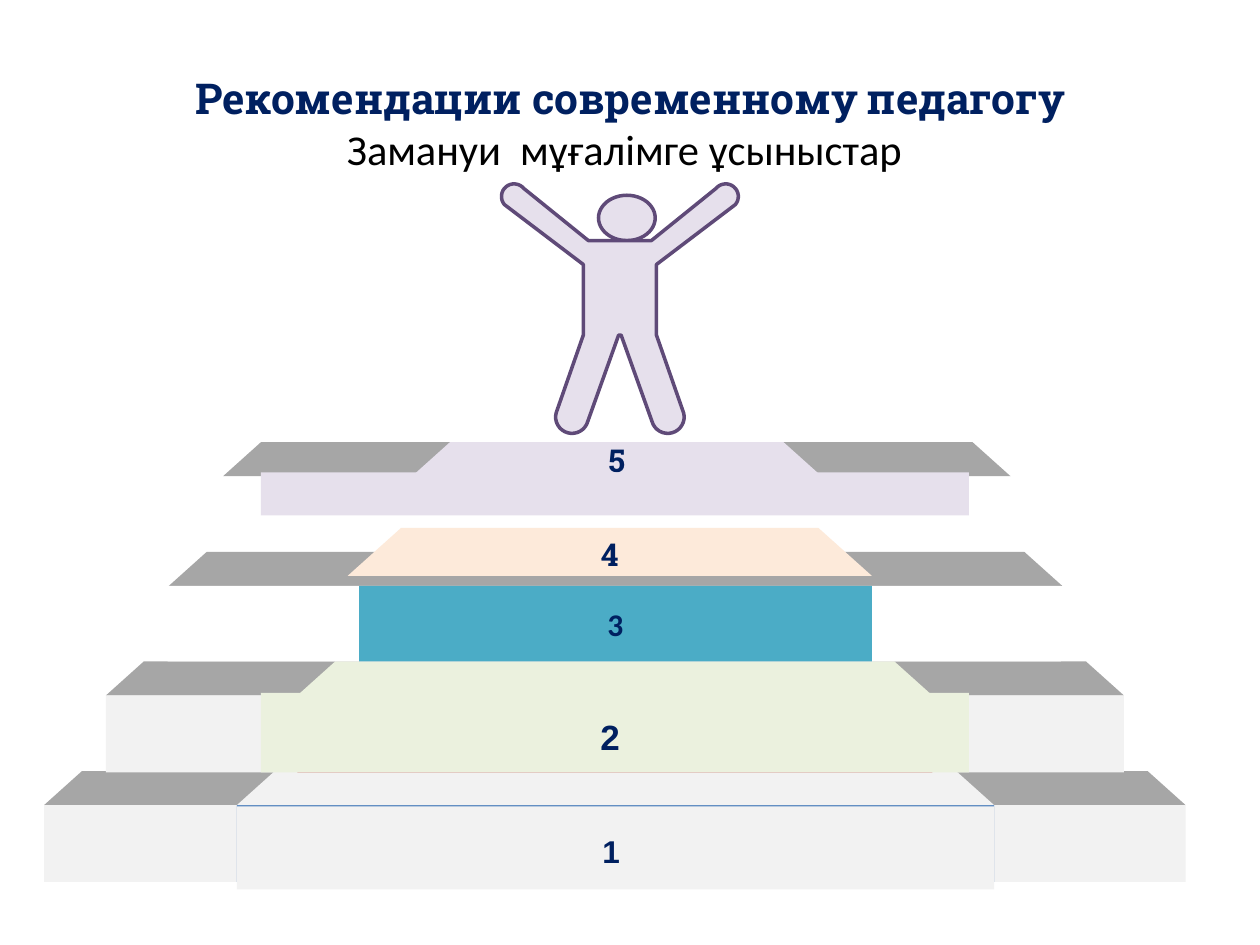
"""Build a slide of five steps with a cheering figure on top."""
from math import cos, radians, sin

from pptx import Presentation
from pptx.dml.color import RGBColor
from pptx.enum.shapes import MSO_SHAPE as Kind
from pptx.enum.text import MSO_ANCHOR as Anchor, PP_ALIGN as Align
from pptx.util import Inches, Pt

NAVY, GREY, PALE, LILAC, PLUM = "002060", "A6A6A6", "F2F2F2", "E6E0EC", "5F4A78"
LIME, PEACH, TEAL = "EBF1DE", "FDEADA", "4BACC6"
SLAB = "Roboto Slab"

TITLE = [
    ("Рекомендации современному педагогу", dict(font=SLAB, size=24.3)),
    ("Замануи  мұғалімге ұсыныстар ",
     dict(font="Calibri", size=24.3, color="000000", bold=False)),
]

STEPS = [
    ("top", (0.35, 6.12, 9.06, 0.27), GREY, None),
    ("face", (0.35, 6.39, 9.06, 0.61), PALE, None),
    ("face", (1.88, 6.39, 6.01, 0.61), "4F81BD", None),
    ("top", (1.88, 6.12, 6.01, 0.27), PALE, None),
    ("top", (0.84, 5.25, 8.08, 0.27), GREY, None),
    ("face", (0.84, 5.52, 8.08, 0.61), PALE, None),
    ("face", (2.36, 5.52, 5.04, 0.61), "C0504D", None),
    ("top", (2.36, 5.25, 5.04, 0.27), LIME, None),
    ("top", (1.34, 4.38, 7.09, 0.27), GREY, None),
    ("face", (1.33, 4.65, 7.09, 0.6), "FFFFFF", None),
    ("face", (2.85, 4.65, 4.07, 0.6), TEAL, ("3", dict(font="Calibri"))),
    ("top", (2.76, 4.19, 4.16, 0.38), PEACH, ("4", dict(font=SLAB))),
    ("face", (1.88, 6.4, 6.01, 0.66), PALE, ("1 ", dict(font="Arial", top=0.2))),
    ("face", (2.07, 5.5, 5.62, 0.63), LIME,
     ("2 ", dict(font="Arial", size=20, top=0.18))),
    ("top", (1.77, 3.51, 6.25, 0.27), GREY, None),
    ("top", (3.27, 3.51, 3.25, 0.27), LILAC, ("5", dict(font=SLAB))),
    ("face", (2.07, 3.75, 5.62, 0.34), LILAC, None),
]

HEAD = (4.75, 1.55, 0.45, 0.36)
MID = 4.92
HAND = (4.08, 1.56, 0.1, -40, -220)
FOOT = (4.54, 3.31, 0.13, 195, 15)


def rgb(code):
    return RGBColor.from_string(code)


def write(frame, text, font=SLAB, size=18, color=NAVY, bold=True,
          top=None, more=False):
    frame.word_wrap = True
    if not more:
        frame.vertical_anchor = Anchor.MIDDLE if top is None else Anchor.TOP
        if top is not None:
            frame.margin_top = Inches(top)
    para = frame.add_paragraph() if more else frame.paragraphs[0]
    para.alignment = Align.CENTER
    run = para.add_run()
    run.text = text
    run.font.name, run.font.size, run.font.bold = font, Pt(size), bold
    run.font.color.rgb = rgb(color)


def paint(shape, fill, line=None):
    shape.shadow.inherit = False
    shape.fill.solid()
    shape.fill.fore_color.rgb = rgb(fill)
    if line:
        shape.line.color.rgb = rgb(line)
        shape.line.width = Pt(2)
    else:
        shape.line.fill.background()


def arc(x, y, r, start, end, count=16):
    turns = [radians(start + (end - start) * i / count) for i in range(count + 1)]
    return [(x + r * cos(t), y + r * sin(t)) for t in turns]


def draw_step(slide, part, box, fill, label):
    kind = Kind.TRAPEZOID if part == "top" else Kind.RECTANGLE
    shape = slide.shapes.add_shape(kind, *map(Inches, box))
    if part == "top":
        shape.adjustments[0] = 1.115
    paint(shape, fill)
    if label:
        text, style = label
        write(shape.text_frame, text, **style)


def draw_man(slide):
    head = slide.shapes.add_shape(Kind.OVAL, *map(Inches, HEAD))
    paint(head, LILAC, PLUM)
    left = [(4.67, 1.91), *arc(*HAND), (4.63, 2.1), (4.63, 2.66),
            *arc(*FOOT), (4.91, 2.66)]
    right = [(2 * MID - x, y) for x, y in reversed(left)]
    dots = [(Inches(x), Inches(y)) for x, y in left + right]
    form = slide.shapes.build_freeform(*dots[0])
    form.add_line_segments(dots[1:], close=True)
    paint(form.convert_to_shape(), LILAC, PLUM)


def main():
    deck = Presentation()
    deck.slide_width, deck.slide_height = Inches(10), Inches(7.5)
    slide = deck.slides.add_slide(deck.slide_layouts[6])
    box = slide.shapes.add_textbox(*map(Inches, (0.43, 0, 9.13, 1.31)))
    for i, (text, style) in enumerate(TITLE):
        write(box.text_frame, text, top=0.57, more=i > 0, **style)
    for step in STEPS:
        draw_step(slide, *step)
    draw_man(slide)
    deck.save("out.pptx")


if __name__ == "__main__":
    main()
